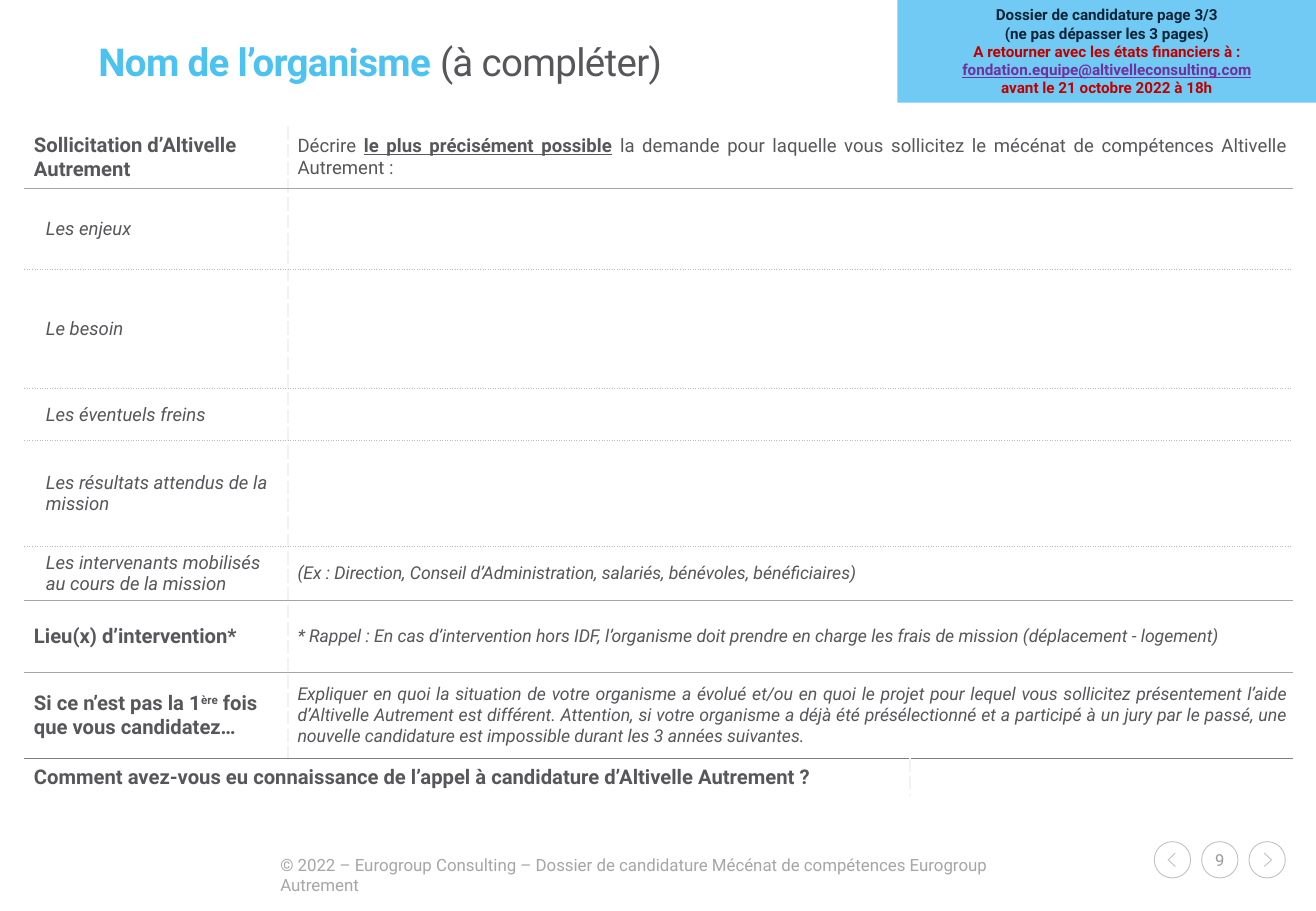
import pptx
import pptx.dml.color
import pptx.enum.shapes
import pptx.enum.text
import pptx.oxml.ns
import pptx.util
from lxml import etree

Cm, Pt = pptx.util.Cm, pptx.util.Pt
RGBColor = pptx.dml.color.RGBColor
ALIGN = pptx.enum.text.PP_ALIGN
MIDDLE = pptx.enum.text.MSO_ANCHOR.MIDDLE
SHAPES = pptx.enum.shapes.MSO_SHAPE
qn = pptx.oxml.ns.qn

WHITE = RGBColor(0xFF, 0xFF, 0xFF)
BODY_GREY = RGBColor(0x57, 0x56, 0x5A)
TITLE_BLUE = RGBColor(0x4C, 0xC2, 0xF1)
BANNER_BLUE = RGBColor(0x71, 0xCA, 0xF3)
NAVY = RGBColor(0x0C, 0x24, 0x37)
RED = RGBColor(0xC0, 0x00, 0x00)
PURPLE = RGBColor(0x70, 0x30, 0xA0)
FOOTER_GREY = RGBColor(0xA6, 0xA6, 0xA6)
NUMBER_GREY = RGBColor(0x9A, 0x9A, 0x9B)
BUTTON_GREY = RGBColor(0xBF, 0xBF, 0xBF)
DOT_GREY = RGBColor(0xBB, 0xBB, 0xBE)
RULE_GREY = RGBColor(0x80, 0x80, 0x80)
PALE_GREY = RGBColor(0xF2, 0xF2, 0xF2)


def add_runs(paragraph, runs, color=BODY_GREY):
    """Each run is (text, font formats); raw holds XML run attributes."""
    for text, formats in runs:
        run = paragraph.add_run()
        run.text = text
        run.font.name = "Roboto"
        run.font.color.rgb = formats.get("color", color)
        for key, value in formats.items():
            if key == "raw":
                run._r.get_or_add_rPr().set(*value)
            elif key != "color":
                setattr(run.font, key, value)


def set_border(cell, side, border):
    line = etree.SubElement(cell._tc.get_or_add_tcPr(), qn("a:ln" + side))
    if border is None:
        line.set("w", "0")
        etree.SubElement(line, qn("a:noFill"))
        return
    color, width, dash = border
    line.set("w", str(Pt(width)))
    fill = etree.SubElement(line, qn("a:solidFill"))
    etree.SubElement(fill, qn("a:srgbClr"), val=str(color))
    etree.SubElement(line, qn("a:prstDash"), val=dash)


deck = pptx.Presentation()
deck.slide_width, deck.slide_height = Cm(27.51), Cm(19.05)
slide = deck.slides.add_slide(deck.slide_layouts[6])
shapes = slide.shapes

# Navigation buttons: previous, page number, next
BUTTON_TOP, BUTTON_SIZE, BUTTON_PITCH = 17.6, 0.76, 0.99
for index, side in enumerate((-1, 0, 1)):
    left = 24.13 + index * BUTTON_PITCH
    button = shapes.add_shape(SHAPES.OVAL, Cm(left), Cm(BUTTON_TOP),
                              Cm(BUTTON_SIZE), Cm(BUTTON_SIZE))
    outlines = [button]
    if side:
        center_x, center_y = left + BUTTON_SIZE / 2, BUTTON_TOP + BUTTON_SIZE / 2
        back_x = Cm(center_x - side * 0.06)
        builder = shapes.build_freeform(back_x, Cm(center_y - 0.14))
        builder.add_line_segments([(Cm(center_x + side * 0.09), Cm(center_y)),
                                   (back_x, Cm(center_y + 0.14))], close=False)
        outlines.append(builder.convert_to_shape())
    else:
        number_frame = button.text_frame
        for key, value in {"margin_left": 0, "margin_right": 0, "margin_top": 0,
                           "margin_bottom": 0, "word_wrap": False,
                           "vertical_anchor": MIDDLE}.items():
            setattr(number_frame, key, value)
        number_frame.paragraphs[0].alignment = ALIGN.CENTER
        add_runs(number_frame.paragraphs[0], [("9", {"size": Pt(9.8)})], NUMBER_GREY)
    for outline in outlines:
        outline.shadow.inherit = False
        outline.fill.background()
        outline.line.color.rgb = BUTTON_GREY
        outline.line.width = Pt(0.5)

# Footer
footer = shapes.add_textbox(Cm(5.61), Cm(17.75), Cm(16.43), Cm(0.69)).text_frame
footer.word_wrap = True
add_runs(footer.paragraphs[0], [(
    "© 2022 – Eurogroup Consulting – Dossier de candidature Mécénat de compétences "
    "Eurogroup Autrement", {"size": Pt(10)})], FOOTER_GREY)

# Title
title = shapes.add_textbox(Cm(2.06), Cm(0.89), Cm(16.5), Cm(0.94)).text_frame
for key, value in {"margin_left": 0, "margin_right": 0, "margin_top": 0, "margin_bottom": 0,
                   "word_wrap": True, "vertical_anchor": MIDDLE}.items():
    setattr(title, key, value)
title.paragraphs[0].line_spacing = 0.86
TITLE_FORMAT = {"size": Pt(22.8), "raw": ("spc", "-40")}
add_runs(title.paragraphs[0], [
    ("Nom de l’organisme ", {**TITLE_FORMAT, "bold": True, "color": TITLE_BLUE}),
    ("(à compléter)", TITLE_FORMAT)])

# Application form: label runs, answer runs
HEADING = {"size": Pt(12), "bold": True}
SUBHEADING = {"size": Pt(11), "italic": True}
PROMPT = {"size": Pt(11)}
HINT = {"size": Pt(10.5), "italic": True}
form_rows = [
    ([("Sollicitation d’Altivelle Autrement", HEADING)],
     [("Décrire ", PROMPT),
      ("le plus précisément possible", {**PROMPT, "bold": True, "underline": True}),
      (" la demande pour laquelle vous sollicitez le mécénat de compétences Altivelle "
       "Autrement :", PROMPT)]),
    ([("Les enjeux", SUBHEADING)], []),
    ([("Le besoin", SUBHEADING)], []),
    ([("Les éventuels freins", SUBHEADING)], []),
    ([("Les résultats attendus de la mission", SUBHEADING)], []),
    ([("Les intervenants mobilisés au cours de la mission", SUBHEADING)],
     [("(Ex : Direction, Conseil d’Administration, salariés, bénévoles, bénéficiaires)", HINT)]),
    ([("Lieu(x) d’intervention*", HEADING)],
     [("* Rappel : En cas d’intervention hors IDF, l’organisme doit prendre en charge les "
       "frais de mission (déplacement - logement)", HINT)]),
    ([("Si ce n’est pas la 1", HEADING), ("ère", {**HEADING, "raw": ("baseline", "30000")}),
      (" fois que vous candidatez…", HEADING)],
     [("Expliquer en quoi la situation de votre organisme a évolué et/ou en quoi le projet "
       "pour lequel vous sollicitez présentement l’aide d’Altivelle Autrement est différent. "
       "Attention, si votre organisme a déjà été présélectionné et a participé à un jury par "
       "le passé, une nouvelle candidature est impossible durant les 3 années suivantes.", HINT)]),
    ([("Comment avez-vous eu connaissance de l’appel à candidature d’Altivelle Autrement ?",
       HEADING)], []),
]
COLUMN_WIDTHS = (5.51, 13, 8)
ROW_HEIGHTS = (1.3, 1.7, 2.49, 1.09, 2.21, 1.09, 1.5, 1.8, 0.79)
DIVIDER = (PALE_GREY, 1, "sysDash")
DOTTED = (DOT_GREY, 0.75, "sysDot")
SOLID = (FOOTER_GREY, 1, "solid")
LAST_RULE = (RULE_GREY, 0.5, "solid")
# Rules above each row, then below the last one
rules = [None, SOLID, DOTTED, DOTTED, DOTTED, DOTTED, SOLID, SOLID, LAST_RULE, None]

form = shapes.add_table(len(ROW_HEIGHTS), len(COLUMN_WIDTHS), Cm(0.51), Cm(2.64),
                        Cm(sum(COLUMN_WIDTHS)), Cm(sum(ROW_HEIGHTS))).table
form.first_row = form.horz_banding = False
for column, width in zip(form.columns, COLUMN_WIDTHS):
    column.width = Cm(width)
for row, height in zip(form.rows, ROW_HEIGHTS):
    row.height = Cm(height)

for r, (label, answer) in enumerate(form_rows):
    answer_column = 2 if r == len(form_rows) - 1 else 1
    if answer_column == 1:
        form.cell(r, 1).merge(form.cell(r, 2))
    else:
        form.cell(r, 0).merge(form.cell(r, 1))
    for c in range(len(COLUMN_WIDTHS)):
        cell = form.cell(r, c)
        for key, value in {"margin_left": Cm(0.2), "margin_right": Cm(0.1),
                           "margin_top": Cm(0.1), "margin_bottom": Cm(0.1),
                           "vertical_anchor": MIDDLE}.items():
            setattr(cell, key, value)
        set_border(cell, "L", DIVIDER if c == answer_column else None)
        set_border(cell, "R", DIVIDER if c == answer_column - 1 else None)
        set_border(cell, "T", rules[r])
        set_border(cell, "B", rules[r + 1])
        cell.fill.solid()
        cell.fill.fore_color.rgb = WHITE
        paragraph = cell.text_frame.paragraphs[0]
        if c == 0:
            if label[0][1] is SUBHEADING:
                paragraph._p.get_or_add_pPr().set("marL", str(Cm(0.25)))
            add_runs(paragraph, label)
        elif c == answer_column and answer:
            paragraph.alignment = ALIGN.JUSTIFY
            add_runs(paragraph, answer)
        else:
            etree.SubElement(paragraph._p, qn("a:endParaRPr"), sz="1050")

# Submission banner
banner = shapes.add_shape(SHAPES.RECTANGLE, Cm(18.76), Cm(0), Cm(8.75), Cm(2.15))
banner.shadow.inherit = False
banner.fill.solid()
banner.fill.fore_color.rgb = BANNER_BLUE
banner.line.fill.background()
banner.text_frame.word_wrap = True
banner.text_frame.vertical_anchor = MIDDLE
for index, (text, color, underline) in enumerate([
        ("Dossier de candidature page 3/3", NAVY, False),
        ("(ne pas dépasser les 3 pages)", NAVY, False),
        ("A retourner avec les états financiers à :", RED, False),
        ("fondation.equipe@altivelleconsulting.com", PURPLE, True),
        ("avant le 21 octobre 2022 à 18h", RED, False)]):
    frame = banner.text_frame
    paragraph = frame.add_paragraph() if index else frame.paragraphs[0]
    paragraph.alignment = ALIGN.CENTER
    add_runs(paragraph, [(text, {"size": Pt(9), "bold": True, "underline": underline})], color)

deck.save("out.pptx")
